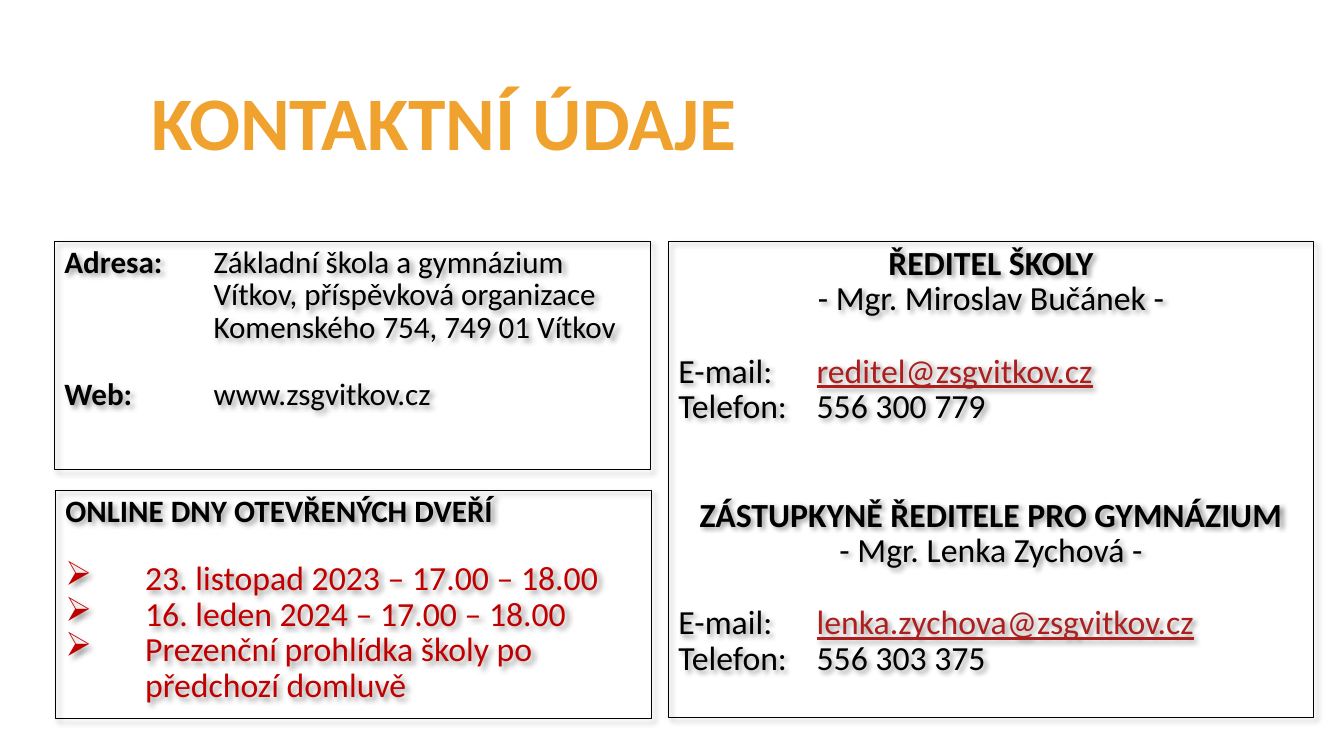
"""Build the school contact slide: a title and three outlined boxes."""
from dataclasses import dataclass

from lxml import etree
from pptx import Presentation
from pptx.dml.color import RGBColor as Rgb
from pptx.enum.shapes import MSO_SHAPE as Preset
from pptx.enum.text import MSO_ANCHOR as Anchor, PP_ALIGN as Align
from pptx.oxml.ns import qn
from pptx.util import Inches, Pt


@dataclass(frozen=True)
class Theme:
    font: str = "Calibri"
    title: str = "F0A22E"
    ink: str = "000000"
    date: str = "C00000"
    link: str = "AD1F1F"
    title_size: float = 54
    small: float = 22.2
    large: float = 24.1
    leading: float = 0.88
    line_height: float = 1.08


theme = Theme()
deck = Presentation()
deck.slide_width, deck.slide_height = Inches(13.33), Inches(7.5)
column, row = deck.slide_width / 100, deck.slide_height / 100
slide = deck.slides.add_slide(deck.slide_layouts[6])


def place(left, top, width, height):
    return [round(n) for n in (left * column, top * row, width * column, height * row)]


def write(paragraph, parts, size, color=theme.ink, indent=0, gap=0, bullet=None, align=Align.LEFT):
    properties = paragraph._p.get_or_add_pPr()
    if indent:
        hang = round(indent * column)
        properties.set("marL", str(hang))
        properties.set("indent", str(-hang))
    if bullet:
        etree.SubElement(properties, qn("a:buChar"), char=bullet)
    paragraph.alignment = align
    paragraph.line_spacing = theme.leading
    if gap:
        paragraph.space_before = Pt(round(gap * size * theme.line_height, 1))
    for words, style in parts:
        run = paragraph.add_run()
        run.text = words
        run.font.name, run.font.size = theme.font, Pt(size)
        run.font.bold = style == "bold"
        run.font.underline = style == "link"
        run.font.color.rgb = Rgb.from_string(theme.link if style == "link" else color)


title = slide.shapes.add_textbox(*place(10.5, 6.8, 79, 19.87)).text_frame
title.word_wrap = True
title.vertical_anchor = Anchor.MIDDLE
write(title.paragraphs[0], [("KONTAKTNÍ ÚDAJE", "bold")], theme.title_size, theme.title)

ADDRESS_TAB, PHONE_TAB, DATE_TAB = 11.1, 10.28, 5.93
address = [
    ([("Adresa:", "bold"),
      ("\tZákladní škola a gymnázium Vítkov, příspěvková organizace", "")], {"indent": ADDRESS_TAB}),
    ([("\tKomenského 754, 749 01 Vítkov", "")], {"indent": ADDRESS_TAB}),
    ([("Web:", "bold"), ("\twww.zsgvitkov.cz", "")], {"indent": ADDRESS_TAB, "gap": 1}),
]

people = []
for role, name, email, phone, gap in (
    ("ŘEDITEL ŠKOLY", "Mgr. Miroslav Bučánek", "reditel@zsgvitkov.cz", "556 300 779", 0),
    ("ZÁSTUPKYNĚ ŘEDITELE PRO GYMNÁZIUM", "Mgr. Lenka Zychová",
     "lenka.zychova@zsgvitkov.cz", "556 303 375", 2),
):
    people += [
        ([(role, "bold")], {"align": Align.CENTER, "gap": gap}),
        ([(f"- {name} -", "")], {"align": Align.CENTER}),
        ([("E-mail:\t", ""), (email, "link")], {"indent": PHONE_TAB, "gap": 1}),
        ([(f"Telefon:\t{phone}", "")], {"indent": PHONE_TAB}),
    ]

open_days = [([("ONLINE DNY OTEVŘENÝCH DVEŘÍ", "bold")], {"size": theme.small})]
for order, event in enumerate((
    "23. listopad 2023 – 17.00 – 18.00",
    "16. leden 2024 – 17.00 – 18.00",
    "Prezenční prohlídka školy po předchozí domluvě",
)):
    open_days.append(([(event, "")], {
        "color": theme.date, "indent": DATE_TAB, "bullet": "➢", "gap": 0 if order else 0.92}))

for area, size, lines in (
    ((4.05, 32, 44.33, 30.13), theme.small, address),
    ((49.74, 32, 48.01, 62.93), theme.large, people),
    ((4.13, 64.93, 44.33, 30.13), theme.large, open_days),
):
    box = slide.shapes.add_shape(Preset.RECTANGLE, *place(*area))
    box.fill.background()
    box.line.color.rgb = Rgb.from_string(theme.ink)
    box.line.width = Pt(0.75)
    box.shadow.inherit = False
    effects = box._element.spPr.find(qn("a:effectLst"))
    shadow = etree.SubElement(effects, qn("a:outerShdw"), blurRad=str(Pt(4)),
                              dist=str(Pt(3)), dir=str(45 * 60000), algn="tl", rotWithShape="0")
    shade = etree.SubElement(shadow, qn("a:srgbClr"), val=theme.ink)
    etree.SubElement(shade, qn("a:alpha"), val="40000")
    frame = box.text_frame
    frame.word_wrap = True
    frame.vertical_anchor = Anchor.TOP
    for position, (parts, style) in enumerate(lines):
        paragraph = frame.add_paragraph() if position else frame.paragraphs[0]
        write(paragraph, parts, **{"size": size, **style})

deck.save("out.pptx")
